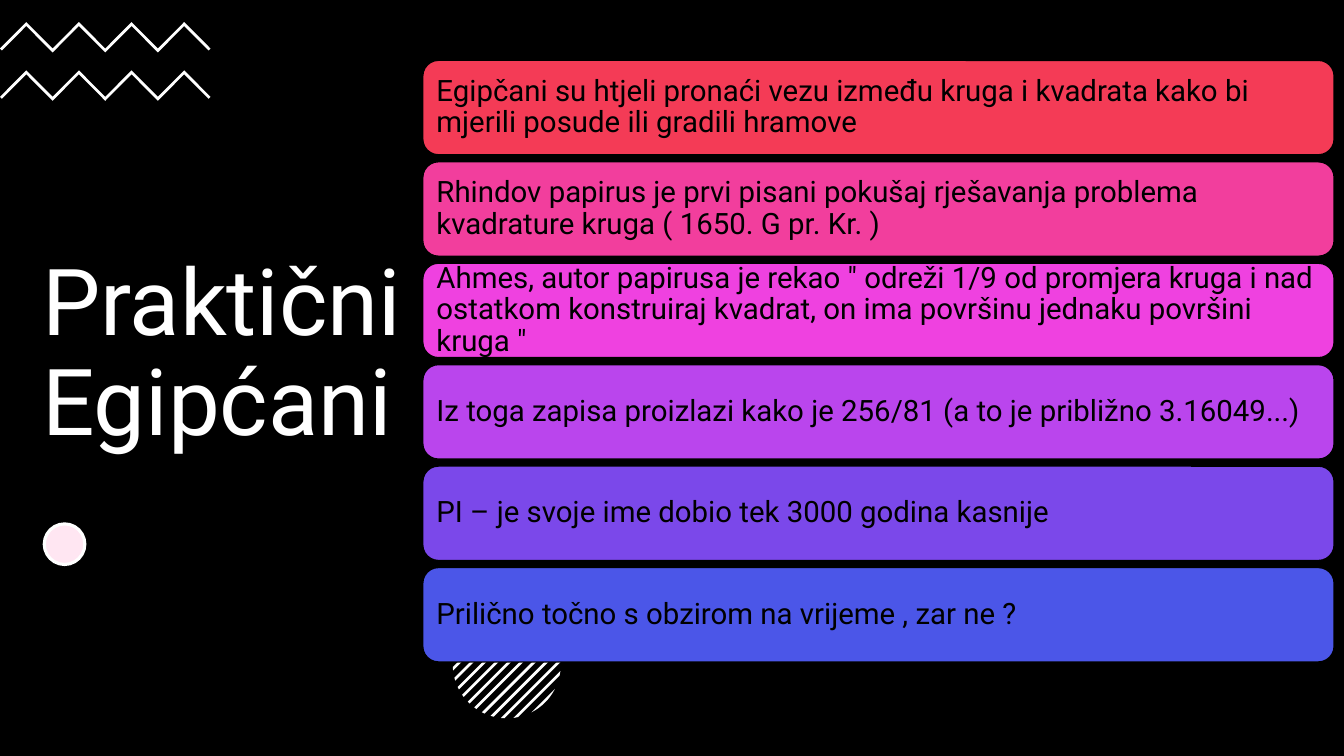
import dataclasses
import math

import pptx
import pptx.dml.color
import pptx.enum.shapes
import pptx.enum.text
import pptx.util

Pt = pptx.util.Pt
SHAPE = pptx.enum.shapes.MSO_SHAPE


@dataclasses.dataclass(frozen=True)
class Theme:
    """Colours, font and type sizes of the slide."""
    font: str = "Roboto"
    title_size: float = 66
    card_size: float = 21
    dark: str = "000000"
    light: str = "FFFFFF"
    dot: str = "FFE6F2"
    cards: tuple = ("F43B56", "F23E9D", "EF41E0", "BA45ED", "7B48EA", "4B56E8")


class Deck:
    """Draws styled elements, measured in points, on the current slide."""

    def __init__(self, prs, theme):
        """Add a blank slide with the theme's dark background."""
        self.theme = theme
        self.s = prs.slides.add_slide(prs.slide_layouts[6])
        self.paint(self.s.background.fill, theme.dark)

    def paint(self, fill, color):
        """Make a fill solid in the given colour."""
        fill.solid()
        fill.fore_color.rgb = pptx.dml.color.RGBColor.from_string(color)

    def set_text(self, sp, text, size, color):
        """Put one middle-anchored, left-aligned paragraph in a shape."""
        tf = sp.text_frame
        tf.word_wrap = True
        tf.vertical_anchor = pptx.enum.text.MSO_ANCHOR.MIDDLE
        p = tf.paragraphs[0]
        p.text = text
        p.alignment = pptx.enum.text.PP_ALIGN.LEFT
        p.line_spacing = 0.9
        p.font.name = self.theme.font
        p.font.size = Pt(size)
        p.font.color.rgb = pptx.dml.color.RGBColor.from_string(color)
        return tf

    def title(self, x, y, w, h, text):
        """Add the title text box."""
        sp = self.s.shapes.add_textbox(Pt(x), Pt(y), Pt(w), Pt(h))
        self.set_text(sp, text, self.theme.title_size, self.theme.light)

    def shape(self, kind, x, y, w, h, fill, line, width):
        """Add a filled and outlined preset shape."""
        sp = self.s.shapes.add_shape(kind, Pt(x), Pt(y), Pt(w), Pt(h))
        sp.shadow.inherit = False
        self.paint(sp.fill, fill)
        self.paint(sp.line.fill, line)
        sp.line.width = Pt(width)
        return sp

    def card(self, x, y, w, h, fill, text):
        """Add a rounded card holding a sentence."""
        sp = self.shape(SHAPE.ROUNDED_RECTANGLE, x, y, w, h, fill, self.theme.dark, 1)
        tf = self.set_text(sp, text, self.theme.card_size, self.theme.dark)
        tf.margin_left = tf.margin_right = Pt(6.5)
        tf.margin_top = tf.margin_bottom = Pt(6.5)

    def polygon(self, points):
        """Add a closed light outline without a line."""
        pts = [(Pt(x), Pt(y)) for x, y in points]
        fb = self.s.shapes.build_freeform(*pts[0], scale=1.0)
        fb.add_line_segments(pts[1:], close=True)
        sp = fb.convert_to_shape()
        sp.shadow.inherit = False
        self.paint(sp.fill, self.theme.light)
        sp.line.fill.background()

    def zigzag(self, y, step=18.8, rise=18.9, thick=2.8, peaks=4):
        """Add a zigzag band starting at the left edge of the slide."""
        last = 2 * peaks
        upper = [(i * step, y + (0 if i % 2 else rise)) for i in range(last + 1)]
        inner = [(px, py + thick) for px, py in upper[1:-1]]
        end = y + rise + thick / 2
        lower = [(thick / 2, end), *inner, (last * step - thick / 2, end)]
        self.polygon(upper + lower[::-1])

    def striped_disc(self, cx, cy, r, first, step, width, count):
        """Add a disc made of diagonal stripes with curved ends."""
        reach = r * math.sqrt(2)
        for i in range(count):
            near = first + i * step
            far = min(near + width, reach)
            a, b = math.acos(near / reach), math.acos(far / reach)
            arc = [a + (b - a) * k / 4 for k in range(5)]
            angles = [math.pi / 4 + t for t in arc]
            angles += [math.pi / 4 - t for t in arc[::-1]]
            self.polygon([(cx + r * math.cos(t), cy + r * math.sin(t)) for t in angles])


CARDS = (
    "Egipčani su htjeli pronaći vezu između kruga i kvadrata kako bi mjerili posude ili gradili hramove",
    "Rhindov papirus je prvi pisani pokušaj rješavanja problema kvadrature kruga ( 1650. G pr. Kr. )",
    'Ahmes, autor papirusa je rekao " odreži 1/9 od promjera kruga i nad ostatkom '
    'konstruiraj kvadrat, on ima površinu jednaku površini kruga "',
    "Iz toga zapisa proizlazi kako je 256/81 (a to je približno 3.16049...)",
    "PI – je svoje ime dobio tek 3000 godina kasnije",
    "Prilično točno s obzirom na vrijeme , zar ne ?",
)


def main():
    """Build and save the slide."""
    prs = pptx.Presentation()
    prs.slide_width, prs.slide_height = Pt(960), Pt(540)
    theme = Theme()
    deck = Deck(prs, theme)
    deck.title(23, 87, 317, 333.5, "Praktični Egipćani")
    for y in (15.8, 50.3):
        deck.zigzag(y)
    deck.shape(SHAPE.OVAL, 31.6, 374.2, 29, 29, theme.dot, theme.light, 2.25)
    deck.striped_disc(362, 474.5, 38.6, first=-36.6, step=8.85, width=2.7, count=11)
    for i, (fill, text) in enumerate(zip(theme.cards, CARDS)):
        deck.card(302, 43.1 + i * 72.45, 651, 67.5, fill, text)
    prs.save("out.pptx")


if __name__ == "__main__":
    main()
